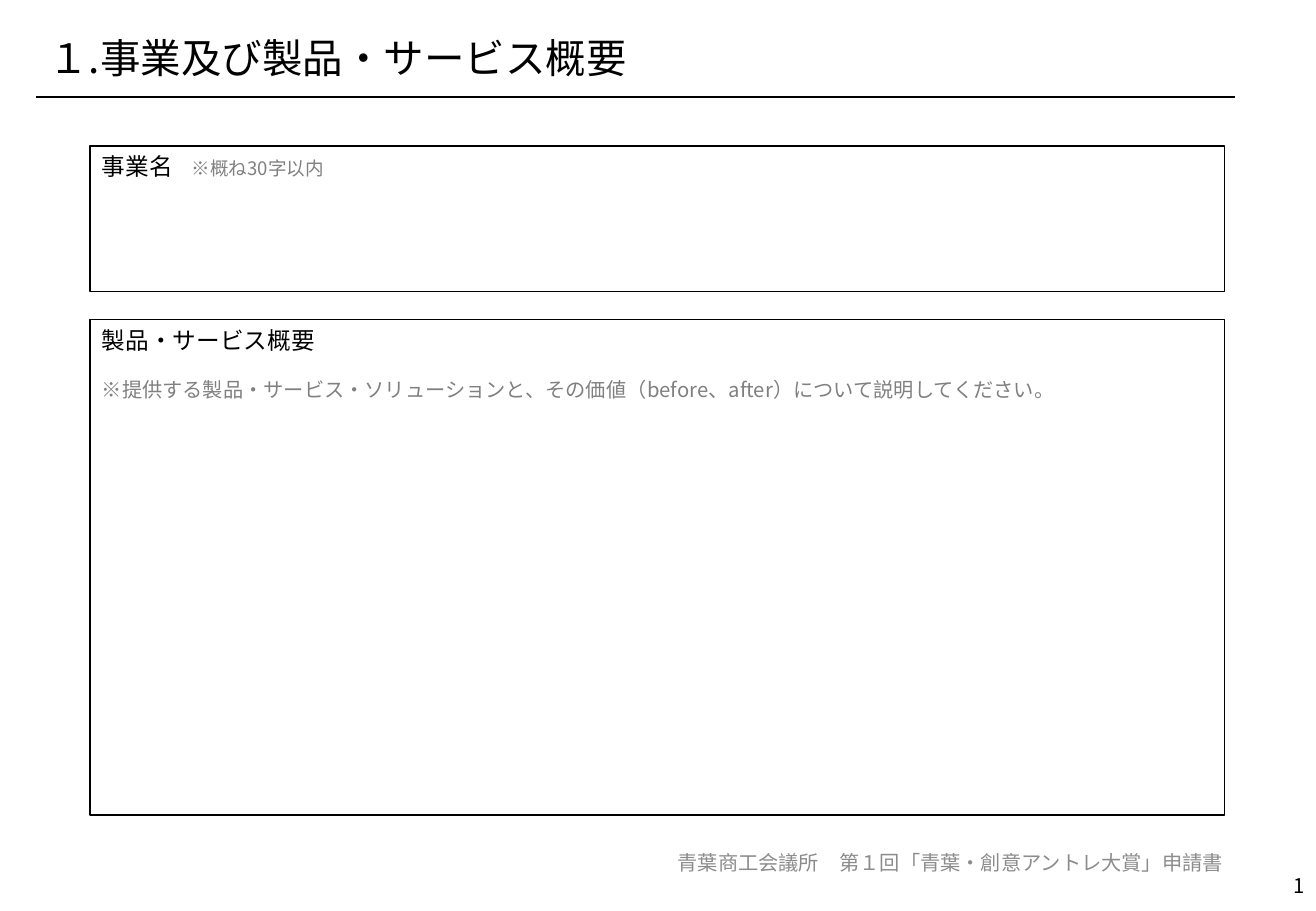
from dataclasses import dataclass

import pptx
import pptx.dml.color
import pptx.enum.shapes
import pptx.enum.text
import pptx.oxml
import pptx.oxml.ns
import pptx.util

Pt = pptx.util.Pt
Align = pptx.enum.text.PP_ALIGN
Anchor = pptx.enum.text.MSO_ANCHOR

FONT = "Noto Sans CJK JP"
COLORS = {"ink": "000000", "hint": "808080", "footer": "8C8C8C"}
BOX_LEFT, BOX_WIDTH = 53.3, 672.5


@dataclass
class Label:
    text: str
    left: float
    top: float
    width: float
    height: float
    size: float = 12
    color: str = "ink"
    align: Align = Align.RIGHT
    line_spacing: float = 1.0


@dataclass
class EntryBox:
    heading: str
    hint: str
    top: float
    height: float
    hint_size: float
    hint_gap: float | None = None  # None keeps the hint on the heading's line


LABELS = [
    Label("１.事業及び製品・サービス概要", 21.6, 13.7, 651.6, 43.9, size=24,
          align=Align.LEFT, line_spacing=0.9),
    Label("青葉商工会議所　第１回「青葉・創意アントレ大賞」申請書",
          353.5, 496.8, 378.7, 28.8, color="footer"),
    Label("1", 751.7, 509.8, 28.8, 30.2),
]

ENTRY_BOXES = [
    EntryBox("事業名", "　※概ね30字以内", 86.4, 86.4, 11),
    EntryBox("製品・サービス概要",
             "※提供する製品・サービス・ソリューションと、その価値"
             "（before、after）について説明してください。",
             189.4, 293.8, 12, hint_gap=14),
]


def rgb(name: str) -> pptx.dml.color.RGBColor:
    return pptx.dml.color.RGBColor.from_string(COLORS[name])


def add_text(para, text: str, *, size: float, color: str = "ink") -> None:
    span = para.add_run()
    span.text = text
    span.font.name = FONT
    span.font.size = Pt(size)
    span.font.color.rgb = rgb(color)
    # East Asian glyphs take their own typeface entry
    latin = span.font._element.find(pptx.oxml.ns.qn("a:latin"))
    east_asian = pptx.oxml.parse_xml(
        f'<a:ea {pptx.oxml.ns.nsdecls("a")} typeface="{FONT}"/>')
    latin.addnext(east_asian)


def draw_label(page, label: Label) -> None:
    box = page.shapes.add_textbox(
        Pt(label.left), Pt(label.top), Pt(label.width), Pt(label.height))
    frame = box.text_frame
    frame.word_wrap = True
    frame.vertical_anchor = Anchor.MIDDLE
    para = frame.paragraphs[0]
    para.alignment = label.align
    para.line_spacing = label.line_spacing
    add_text(para, label.text, size=label.size, color=label.color)


def draw_entry_box(page, entry: EntryBox) -> None:
    box = page.shapes.add_shape(
        pptx.enum.shapes.MSO_SHAPE.RECTANGLE,
        Pt(BOX_LEFT), Pt(entry.top), Pt(BOX_WIDTH), Pt(entry.height))
    box.shadow.inherit = False
    box.fill.background()
    box.line.color.rgb = rgb("ink")
    box.line.width = Pt(1)
    frame = box.text_frame
    frame.word_wrap = True
    frame.vertical_anchor = Anchor.TOP
    para = frame.paragraphs[0]
    para.alignment = Align.LEFT
    add_text(para, entry.heading, size=14)
    if entry.hint_gap is not None:
        para = frame.add_paragraph()
        para.alignment = Align.LEFT
        para.space_before = Pt(entry.hint_gap)
    add_text(para, entry.hint, size=entry.hint_size, color="hint")


def draw_rule(page, left: float, right: float, top: float) -> None:
    rule = page.shapes.add_connector(
        pptx.enum.shapes.MSO_CONNECTOR.STRAIGHT,
        Pt(left), Pt(top), Pt(right), Pt(top))
    rule.line.color.rgb = rgb("ink")
    rule.line.width = Pt(1)
    rule._element.spPr.append(pptx.oxml.parse_xml(
        f'<a:effectLst {pptx.oxml.ns.nsdecls("a")}/>'))


def main() -> None:
    deck = pptx.Presentation()
    deck.slide_width, deck.slide_height = Pt(780), Pt(540)
    page = deck.slides.add_slide(deck.slide_layouts[6])

    # Entry fields
    for entry in ENTRY_BOXES:
        draw_entry_box(page, entry)

    # Title, footer and page number
    for label in LABELS:
        draw_label(page, label)

    # Rule under the title
    draw_rule(page, 21.6, 732.2, 57.6)

    deck.save("out.pptx")


if __name__ == "__main__":
    main()
